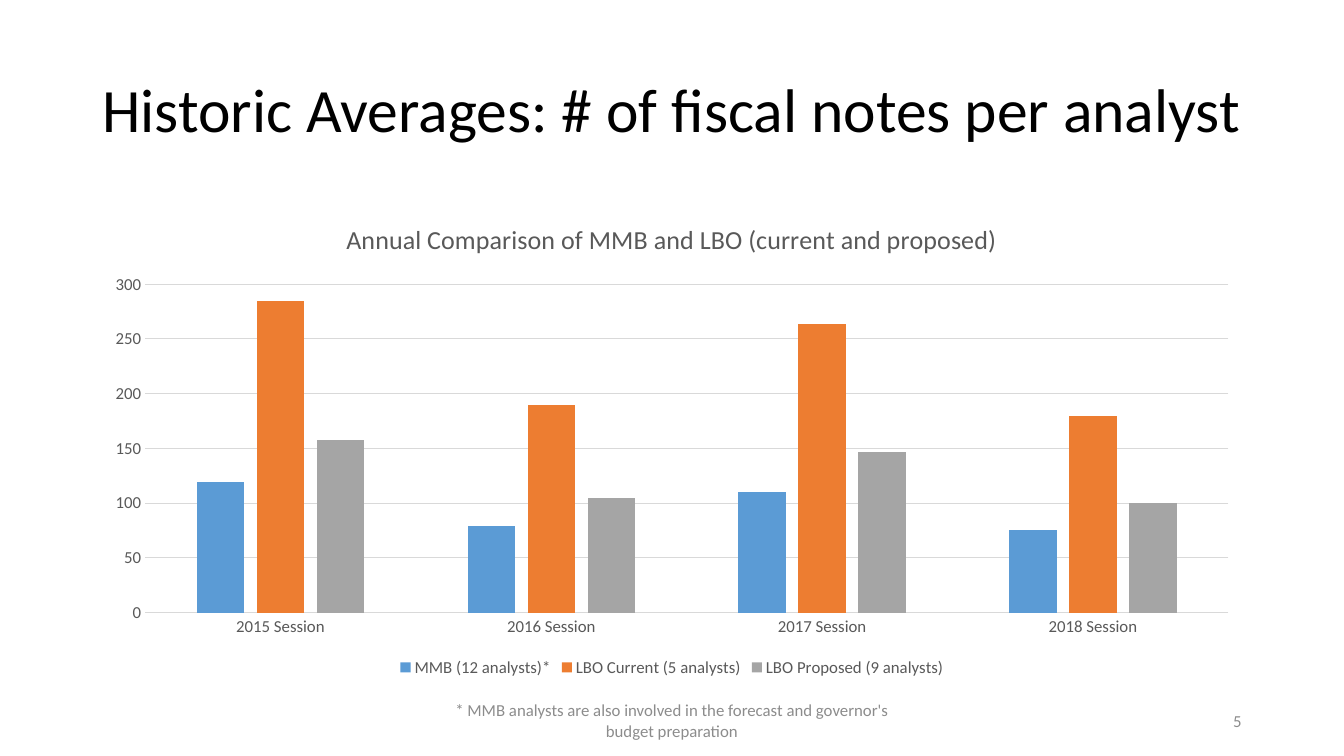
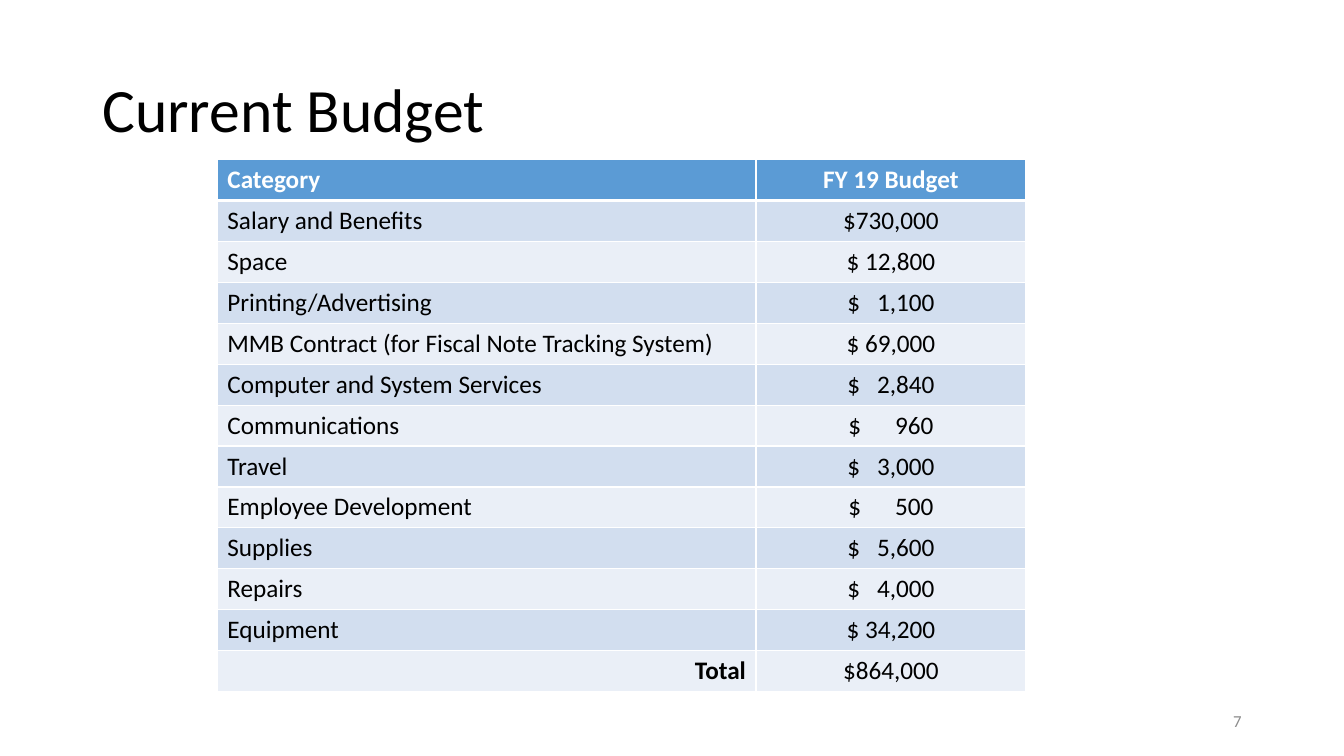
from lxml import etree
from pptx import Presentation
from pptx.chart.data import CategoryChartData
from pptx.dml.color import RGBColor
from pptx.enum.chart import XL_CHART_TYPE as Kind, XL_LEGEND_POSITION as Spot, XL_TICK_MARK as Tick
from pptx.enum.text import MSO_ANCHOR as Anchor, PP_ALIGN as Align
from pptx.oxml.ns import qn
from pptx.util import Pt

PX = 9525
FONT = "Calibri"
BLACK = RGBColor(0x00, 0x00, 0x00)
WHITE = RGBColor(0xFF, 0xFF, 0xFF)
BLUE = RGBColor(0x5B, 0x9B, 0xD5)
ORANGE = RGBColor(0xED, 0x7D, 0x31)
GRAY = RGBColor(0xA5, 0xA5, 0xA5)
INK = RGBColor(0x59, 0x59, 0x59)
RULE = RGBColor(0xD9, 0xD9, 0xD9)
NOTE = RGBColor(0x8C, 0x8C, 0x8C)
BANDS = (RGBColor(0xEA, 0xEF, 0xF7), RGBColor(0xD2, 0xDE, 0xEF))

LEFT, WIDE = 88, 1104
FOOT, FOOT_H = 667, 38


def style(font, size, color, bold=False):
    font.name, font.size, font.bold = FONT, Pt(size), bold
    font.color.rgb = color


def add_text(slide, text, box, size, color, align=Align.LEFT, lead=1.0):
    frame = slide.shapes.add_textbox(*(n * PX for n in box)).text_frame
    frame.word_wrap = True
    frame.vertical_anchor = Anchor.MIDDLE
    frame.text = text
    para = frame.paragraphs[0]
    para.alignment, para.line_spacing = align, lead
    style(para.runs[0].font, size, color)


deck = Presentation()
deck.slide_width, deck.slide_height = 1280 * PX, 720 * PX

# Titles and page numbers
pages = []
for title, num in (("Historic Averages: # of fiscal notes per analyst", "5"),
                   ("Current Budget", "7")):
    slide = deck.slides.add_slide(deck.slide_layouts[6])
    add_text(slide, title, (LEFT, 38, WIDE, 139), 44, BLACK, lead=0.9)
    add_text(slide, num, (904, FOOT, 288, FOOT_H), 12, NOTE, Align.RIGHT)
    pages.append(slide)
notes, budget = pages

# Chart of fiscal notes per analyst
add_text(notes, "* MMB analysts are also involved in the forecast and governor's budget preparation",
         (424, FOOT, 432, FOOT_H), 12, NOTE, Align.CENTER)
series = (
    ("MMB (12 analysts)*", (119, 79, 110, 75), BLUE),
    ("LBO Current (5 analysts)", (285, 190, 264, 180), ORANGE),
    ("LBO Proposed (9 analysts)", (158, 105, 147, 100), GRAY),
)
data = CategoryChartData()
data.categories = [f"{year} Session" for year in range(2015, 2019)]
for name, vals, _ in series:
    data.add_series(name, vals)
chart = notes.shapes.add_chart(Kind.COLUMN_CLUSTERED, LEFT * PX, 192 * PX,
                               WIDE * PX, 457 * PX, data).chart
style(chart.font, 12, INK)
chart.has_title = True
head = chart.chart_title.text_frame
head.text = "Annual Comparison of MMB and LBO (current and proposed)"
style(head.paragraphs[0].runs[0].font, 18.6, INK)
chart.has_legend = True
chart.legend.position = Spot.BOTTOM
chart.legend.include_in_layout = False
style(chart.legend.font, 12, INK)

plot = chart.plots[0]
plot.gap_width, plot.overlap, plot.vary_by_categories = 219, -27, False
for bars, (_, _, color) in zip(plot.series, series):
    bars.format.fill.solid()
    bars.format.fill.fore_color.rgb = color

cats, vals = chart.category_axis, chart.value_axis
for axis in (cats, vals):
    axis.major_tick_mark = axis.minor_tick_mark = Tick.NONE
    style(axis.tick_labels.font, 12, INK)
vals.minimum_scale, vals.maximum_scale, vals.major_unit = 0, 300, 50
vals.has_major_gridlines = True
vals.format.line.fill.background()
for line in (cats.format.line, vals.major_gridlines.format.line):
    line.color.rgb, line.width = RULE, Pt(0.75)

# Budget table
rows = (
    ("Category", "FY 19 Budget"),
    ("Salary and Benefits", "$730,000"),
    ("Space", "$ 12,800"),
    ("Printing/Advertising", "$   1,100"),
    ("MMB Contract (for Fiscal Note Tracking System)", "$ 69,000"),
    ("Computer and System Services", "$   2,840"),
    ("Communications", "$      960"),
    ("Travel", "$   3,000"),
    ("Employee Development", "$      500"),
    ("Supplies", "$   5,600"),
    ("Repairs", "$   4,000"),
    ("Equipment", "$ 34,200"),
    ("Total", "$864,000"),
)
widths, row_h = (513, 257), 39
table = budget.shapes.add_table(len(rows), len(widths), 207 * PX, 152 * PX,
                                sum(widths) * PX, len(rows) * row_h * PX).table
for col, width in zip(table.columns, widths):
    col.width = width * PX
for r, row in enumerate(rows):
    top, total = r == 0, r == len(rows) - 1
    for c, text in enumerate(row):
        cell = table.cell(r, c)
        props = cell._tc.get_or_add_tcPr()
        for side in "LRTB":
            thick = (r, side) in ((0, "B"), (1, "T"))
            edge = etree.SubElement(props, qn(f"a:ln{side}"), w=str(Pt(3 if thick else 1)))
            fill = etree.SubElement(edge, qn("a:solidFill"))
            etree.SubElement(fill, qn("a:srgbClr"), val=str(WHITE))
        cell.fill.solid()
        cell.fill.fore_color.rgb = BLUE if top else BANDS[r % 2]
        cell.text_frame.text = text
        para = cell.text_frame.paragraphs[0]
        para.alignment = Align.CENTER if c else Align.RIGHT if total else Align.LEFT
        style(para.runs[0].font, 18, WHITE if top else BLACK, top or (total and c == 0))

deck.save("out.pptx")
